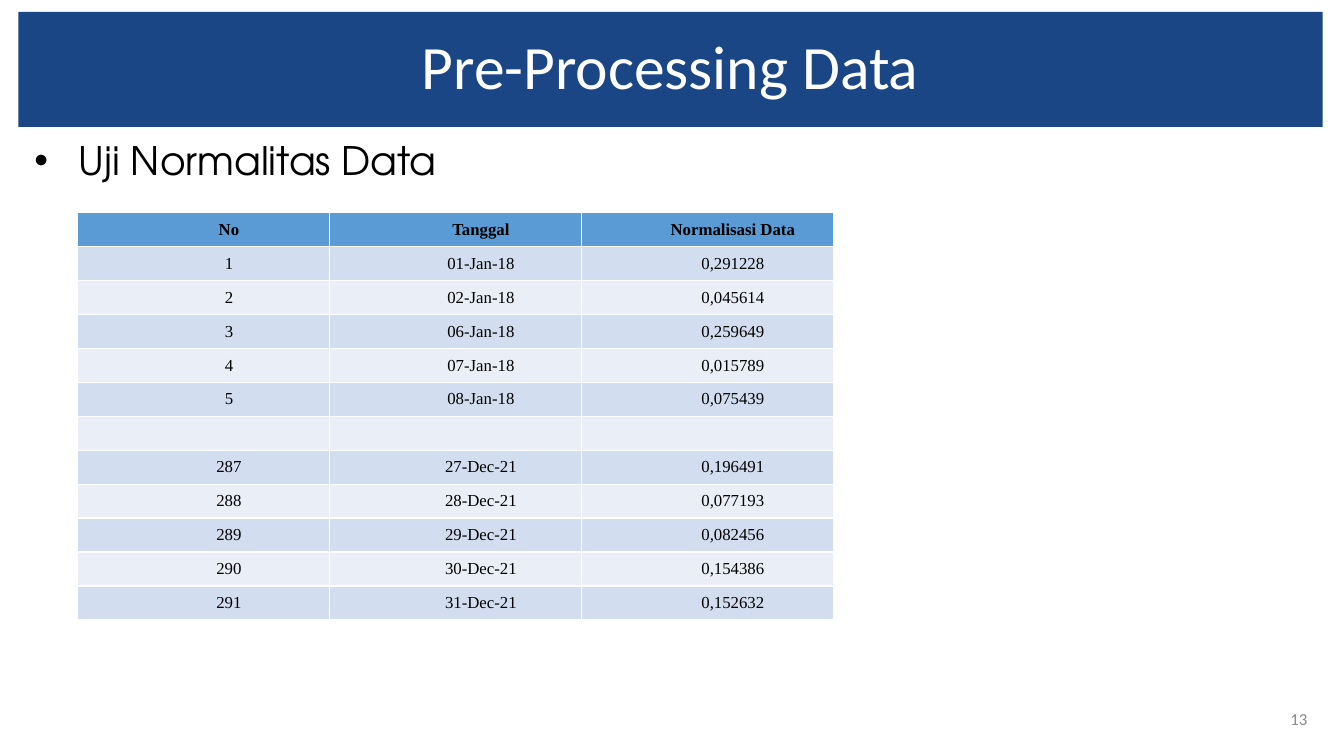
from lxml import etree
from pptx import Presentation
from pptx.dml.color import RGBColor
from pptx.enum.text import MSO_ANCHOR, MSO_AUTO_SIZE, PP_ALIGN
from pptx.oxml.ns import qn
from pptx.util import Cm, Pt

MIDDLE, TOP = MSO_ANCHOR.MIDDLE, MSO_ANCHOR.TOP
CENTER, LEFT, RIGHT = PP_ALIGN.CENTER, PP_ALIGN.LEFT, PP_ALIGN.RIGHT
NO_FIT = MSO_AUTO_SIZE.NONE

COLORS = {
    "banner": "1B4685", "white": "FFFFFF", "black": "000000", "gray": "888888",
    "header": "5B9BD5", "odd": "D2DEEF", "even": "EAEFF7",
}
FORMATS = {
    "title": {"size": Pt(44), "name": "Calibri", "color": "white"},
    "body": {"size": Pt(28), "name": "TeX Gyre Adventor", "color": "black"},
    "header": {"size": Pt(12), "name": "Times New Roman", "color": "black", "bold": True},
    "cell": {"size": Pt(12), "name": "Times New Roman", "color": "black", "bold": False},
    "number": {"size": Pt(12), "name": "Calibri", "color": "gray"},
}
ROWS = [
    ("No", "Tanggal", "Normalisasi Data"),
    ("1", "01-Jan-18", "0,291228"),
    ("2", "02-Jan-18", "0,045614"),
    ("3", "06-Jan-18", "0,259649"),
    ("4", "07-Jan-18", "0,015789"),
    ("5", "08-Jan-18", "0,075439"),
    ("", "", ""),
    ("287", "27-Dec-21", "0,196491"),
    ("288", "28-Dec-21", "0,077193"),
    ("289", "29-Dec-21", "0,082456"),
    ("290", "30-Dec-21", "0,154386"),
    ("291", "31-Dec-21", "0,152632"),
]


def rgb(name):
    return RGBColor.from_string(COLORS[name])


def add_run(p, text, style):
    r = p.add_run()
    r.text = text
    for key, value in FORMATS[style].items():
        if key == "color":
            r.font.color.rgb = rgb(value)
        else:
            setattr(r.font, key, value)


def set_indent(p, left, first):
    pPr = p._p.get_or_add_pPr()
    pPr.set("marL", str(left))
    pPr.set("indent", str(first))
    return pPr


def fill_text(sp, box, text, style, align, anchor):
    """Move a shape to its box and write one paragraph in it."""
    sp.left, sp.top, sp.width, sp.height = box
    tf = sp.text_frame
    tf.word_wrap, tf.auto_size, tf.vertical_anchor = True, NO_FIT, anchor
    p = tf.paragraphs[0]
    p.alignment = align
    add_run(p, text, style)
    return p


def add_title(s, box, text):
    sp = s.shapes.title
    sp.fill.solid()
    sp.fill.fore_color.rgb = rgb("banner")
    p = fill_text(sp, box, text, "title", CENTER, MIDDLE)
    p.line_spacing = 0.9


def add_body(s, box, text):
    p = fill_text(s.placeholders[1], box, text, "body", LEFT, TOP)
    pPr = set_indent(p, Cm(1.27), Cm(-1.12))
    etree.SubElement(pPr, qn("a:buFont"), typeface="Arial")
    etree.SubElement(pPr, qn("a:buChar"), char="•")
    p.line_spacing = 0.9
    p.space_before = Pt(0)


def add_data_table(s, box, rows):
    table = s.shapes.add_table(len(rows), len(rows[0]), *box).table
    for i, row in enumerate(rows):
        style = "cell" if i else "header"
        color = ("even", "odd")[i % 2] if i else "header"
        for j, text in enumerate(row):
            cell = table.cell(i, j)
            cell.fill.solid()
            cell.fill.fore_color.rgb = rgb(color)
            cell.vertical_anchor = MIDDLE
            cell.margin_left = cell.margin_right = Cm(0.18)
            cell.margin_top = cell.margin_bottom = 0
            if text:
                p = cell.text_frame.paragraphs[0]
                p.alignment = CENTER
                set_indent(p, Cm(1.27), 0)
                add_run(p, text, style)


def add_slide_number(s, box, text):
    fill_text(s.shapes.add_textbox(*box), box, text, "number", RIGHT, MIDDLE)


def main():
    prs = Presentation()
    prs.slide_width, prs.slide_height = Cm(33.87), Cm(19.05)
    s = prs.slides.add_slide(prs.slide_layouts[1])
    left, width = Cm(0.46), Cm(32.87)
    add_title(s, (left, Cm(0.3), width, Cm(2.9)), "Pre-Processing Data")
    add_body(s, (left, Cm(3.43), width, Cm(14.15)), "Uji Normalitas Data")
    add_data_table(s, (Cm(1.96), Cm(5.36), Cm(19.05), Cm(10.26)), ROWS)
    add_slide_number(s, (Cm(31.75), Cm(17.6), Cm(1.45), Cm(1.02)), "13")
    prs.save("out.pptx")


if __name__ == "__main__":
    main()
